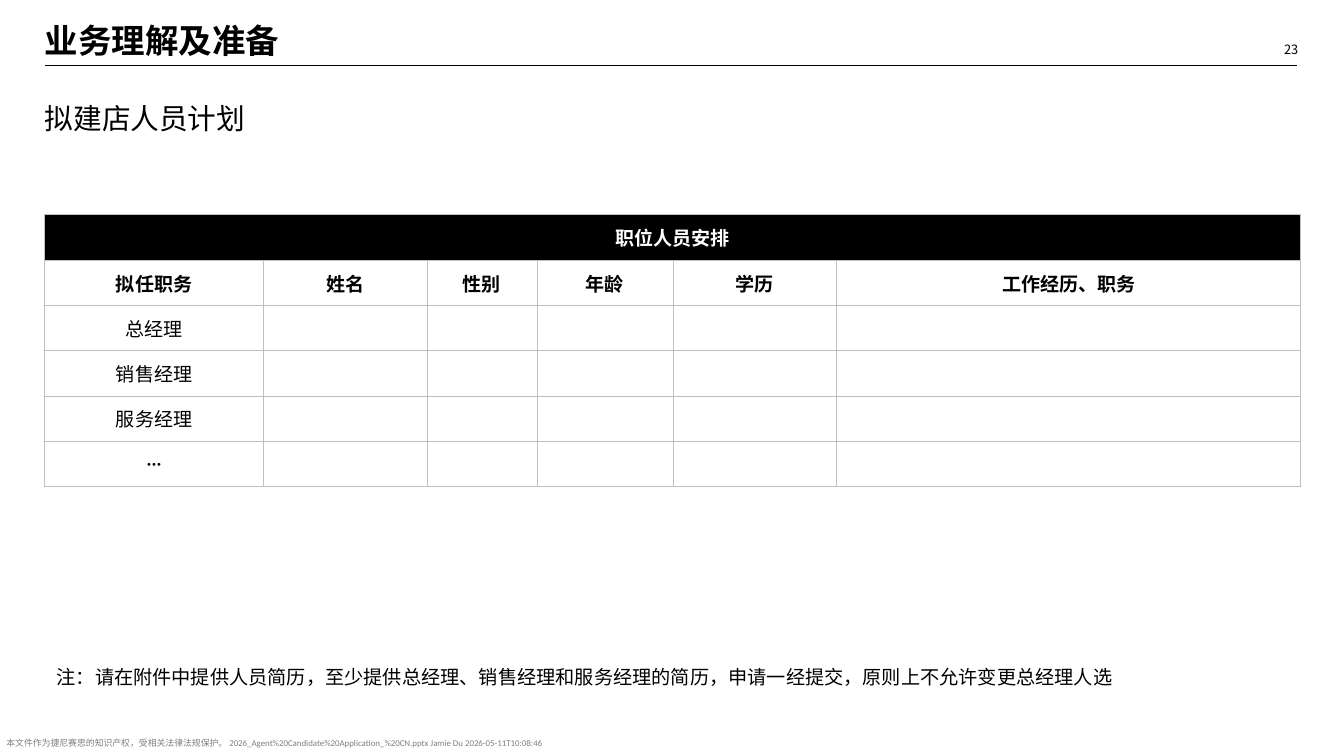
from lxml import etree
from pptx import Presentation
from pptx.dml.color import RGBColor
from pptx.enum.shapes import MSO_CONNECTOR
from pptx.enum.text import MSO_ANCHOR, MSO_AUTO_SIZE, PP_ALIGN
from pptx.oxml.ns import qn
from pptx.util import Inches, Pt

LEFT, CENTER, RIGHT = PP_ALIGN.LEFT, PP_ALIGN.CENTER, PP_ALIGN.RIGHT
TOP, MIDDLE = MSO_ANCHOR.TOP, MSO_ANCHOR.MIDDLE
FIXED = MSO_AUTO_SIZE.NONE
STRAIGHT = MSO_CONNECTOR.STRAIGHT

BLACK, WHITE, GRID = "000000", "FFFFFF", "BFBFBF"
CHINESE_FONT = "Noto Sans CJK SC"
COLUMN_WIDTHS = [2.39, 1.79, 1.2, 1.49, 1.79, 5.08]
HEADINGS = ["拟任职务", "姓名", "性别", "年龄", "学历", "工作经历、职务"]
POSITIONS = ["总经理", "销售经理", "服务经理", "···"]


def paint(color, value):
    color.rgb = RGBColor.from_string(value)


def apply(target, values):
    for name, value in values.items():
        setattr(target, name, value)


class PlanSlide:
    def __init__(self, deck):
        self.page = deck.slides.add_slide(deck.slide_layouts[1])

    def add_span(self, para, text, size, font=CHINESE_FONT, color=BLACK, bold=False, align=LEFT):
        para.alignment = align
        span = para.add_run()
        span.text = text
        apply(span.font, {"name": font, "size": Pt(size), "bold": bold})
        paint(span.font.color, color)
        etree.SubElement(span._r.get_or_add_rPr(), qn("a:ea"), typeface=CHINESE_FONT)
        return span

    def fill_box(self, box, area, text, size, margins=(0, 0, 0, 0), **style):
        apply(box, dict(zip(("left", "top", "width", "height"), map(Inches, area))))
        frame = box.text_frame
        sides = ("margin_left", "margin_top", "margin_right", "margin_bottom")
        apply(frame, dict(zip(sides, map(Inches, margins))))
        apply(frame, {"word_wrap": True, "auto_size": FIXED, "vertical_anchor": TOP})
        para = frame.paragraphs[0]
        apply(para, {"line_spacing": 0.9, "space_before": Pt(0)})
        return self.add_span(para, text, size, **style)

    def title(self, area, text, size, **style):
        self.fill_box(self.page.shapes.title, area, text, size, **style)

    def subtitle(self, area, text, size, **style):
        box = self.page.placeholders[1]
        properties = box.text_frame.paragraphs[0]._p.get_or_add_pPr()
        properties.set("marL", "0")
        properties.set("indent", "0")
        etree.SubElement(properties, qn("a:buNone"))
        self.fill_box(box, area, text, size, **style)

    def text(self, area, text, size, opacity=None, **style):
        box = self.page.shapes.add_textbox(*map(Inches, area))
        span = self.fill_box(box, area, text, size, **style)
        if opacity is not None:
            color = span._r.find(".//" + qn("a:srgbClr"))
            etree.SubElement(color, qn("a:alpha"), val=str(opacity * 1000))

    def line(self, start, end, color, width):
        line = self.page.shapes.add_connector(STRAIGHT, *map(Inches, start + end))
        paint(line.line.color, color)
        line.line.width = Pt(width)
        etree.SubElement(line._element.spPr, qn("a:effectLst"))

    def border(self, cell, side, width):
        properties = cell._tc.get_or_add_tcPr()
        edge = etree.SubElement(properties, qn("a:ln" + side), w=str(int(Pt(width))))
        fill = etree.SubElement(edge, qn("a:solidFill"))
        etree.SubElement(fill, qn("a:srgbClr"), val=GRID)

    def table(self, area, title, headings, positions, widths):
        row_count, column_count = len(positions) + 2, len(widths)
        table = self.page.shapes.add_table(row_count, column_count, *map(Inches, area)).table
        apply(table, {"first_row": False, "horz_banding": False})
        for column, width in zip(table.columns, widths):
            column.width = Inches(width)
        table.cell(0, 0).merge(table.cell(0, column_count - 1))
        rows = [[title], headings] + [[position] for position in positions]
        for row, texts in enumerate(rows):
            for column in range(column_count):
                cell = table.cell(row, column)
                outer = {
                    "L": column == 0,
                    "R": column == column_count - 1 or row == 0,
                    "T": row == 0,
                    "B": row == row_count - 1,
                }
                for side, is_outer in outer.items():
                    self.border(cell, side, 1 if is_outer else 0.25)
                if row == 0:
                    cell.fill.solid()
                    paint(cell.fill.fore_color, BLACK)
                else:
                    cell.fill.background()
                margin = Inches(0.06)
                apply(cell, {
                    "vertical_anchor": MIDDLE,
                    "margin_left": margin,
                    "margin_right": margin,
                    "margin_top": margin,
                    "margin_bottom": margin,
                })
                if column < len(texts):
                    self.add_span(
                        cell.text_frame.paragraphs[0], texts[column], 15, font="Lato",
                        color=WHITE if row == 0 else BLACK, bold=row < 2, align=CENTER,
                    )


def main():
    deck = Presentation()
    apply(deck, {"slide_width": Inches(14.7), "slide_height": Inches(8.27)})
    slide = PlanSlide(deck)
    slide.text((12.03, 0.47, 2.17, 0.11), "23", 10.1, font="Noto Sans CJK KR", align=RIGHT)
    slide.text(
        (0.07, 8.08, 7, 0.12),
        "本文件作为捷尼赛思的知识产权，受相关法律法规保护。 "
        "2026_Agent%20Candidate%20Application_%20CN.pptx Jamie Du 2026-05-11T10:08:46",
        7, font="Calibri", opacity=50,
    )
    slide.line((0.49, 0.72), (14.19, 0.72), BLACK, 0.5)
    slide.title((0.49, 0.27, 12.85, 0.33), "业务理解及准备", 26.4, font="Roboto", bold=True)
    slide.subtitle((0.49, 1.15, 13.71, 0.66), "拟建店人员计划", 22.6)
    slide.table((0.49, 2.35, 13.74, 2.97), "职位人员安排", HEADINGS, POSITIONS, COLUMN_WIDTHS)
    slide.text(
        (0.62, 7.26, 13.43, 0.35),
        "注：请在附件中提供人员简历，至少提供总经理、销售经理和服务经理的简历，"
        "申请一经提交，原则上不允许变更总经理人选",
        15.1, margins=(0, 0.05, 0.1, 0.05),
    )
    deck.save("out.pptx")


if __name__ == "__main__":
    main()
